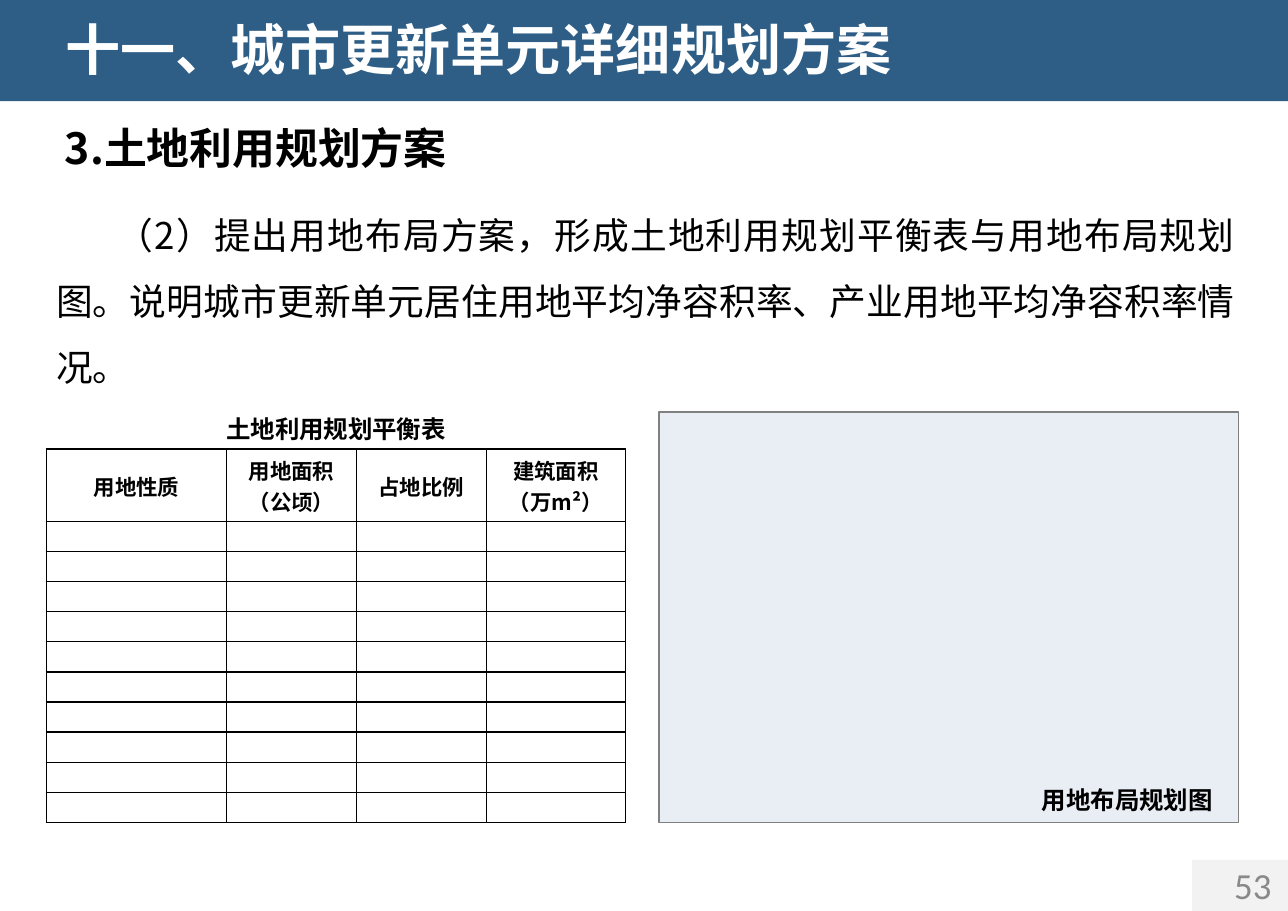
"""Builds the land-use planning slide with its balance table and layout panel."""
import pptx
import pptx.dml.color
import pptx.enum.shapes
import pptx.enum.text
import pptx.oxml.ns
import pptx.util
from lxml import etree

ALIGN = pptx.enum.text.PP_ALIGN
ANCHOR = pptx.enum.text.MSO_ANCHOR
qn = pptx.oxml.ns.qn

WIDTH, HEIGHT = pptx.util.Inches(11.69), pptx.util.Inches(8.27)
CJK, LATIN = "Noto Sans CJK SC", "Calibri"
BLACK, WHITE, GREY, PAGE_GREY = "000000", "FFFFFF", "808080", "898989"
BAND_BLUE, PANEL_BLUE = "2E5E86", "2F5597"

TITLE = "十一、城市更新单元详细规划方案"
SECTION = "3.土地利用规划方案"
BODY = ("（2）提出用地布局方案，形成土地利用规划平衡表与用地布局规划图。"
        "说明城市更新单元居住用地平均净容积率、产业用地平均净容积率情况。")
TABLE_CAPTION = "土地利用规划平衡表"
PANEL_CAPTION = "用地布局规划图"
PAGE_NUMBER = "53"
HEADINGS = ["用地性质", "用地面积\n（公顷）", "占地比例", "建筑面积\n（万m²）"]
COLUMN_WEIGHTS = [1.64, 1.18, 1.18, 1.27]
ROW_WEIGHTS = [12] + [5] * 10

# Left, top, width and height as percentages of the slide.
AREAS = {
    "corner": (92.55, 94.4, 7.45, 5.6),
    "band": (0, 0, 100, 11.1),
    "title": (4.2, 1.1, 73.4, 8.5),
    "section": (4.2, 12.7, 69.9, 6.9),
    "page": (94.55, 94.3, 5.45, 5.6),
    "panel": (51.15, 45.2, 45, 45.1),
    "panel caption": (80.05, 86, 16.3, 4.1),
    "body": (3.85, 20.55, 92.55, 22.7),
    "table caption": (3.6, 45.2, 45, 4.1),
    "table": (3.6, 49.3, 45, 41),
}


def area(name):
    """Returns the left, top, width and height of a named area."""
    return [int(share * side / 100)
            for share, side in zip(AREAS[name], (WIDTH, HEIGHT) * 2)]


def rgb(code):
    """Turns a hex string into a colour."""
    return pptx.dml.color.RGBColor.from_string(code)


def style(paragraph, size, color=BLACK, bold=False, align=ALIGN.LEFT, face=CJK):
    """Sets the alignment and font of a paragraph."""
    paragraph.alignment = align
    font = paragraph.font
    font.size, font.bold, font.name = pptx.util.Pt(size), bold, face
    font.color.rgb = rgb(color)
    defaults = paragraph._p.pPr.find(qn("a:defRPr"))
    etree.SubElement(defaults, qn("a:ea"), typeface=face)


def add_box(slide, name, color, alpha=100, outline=None):
    """Adds a plain rectangle."""
    box = slide.shapes.add_shape(
        pptx.enum.shapes.MSO_SHAPE.RECTANGLE, *area(name))
    box.shadow.inherit = False
    box.fill.solid()
    box.fill.fore_color.rgb = rgb(color)
    if alpha < 100:
        tint = box.element.spPr.find(qn("a:solidFill"))[0]
        etree.SubElement(tint, qn("a:alpha"), val=str(alpha * 1000))
    if outline:
        box.line.color.rgb = rgb(outline)
        box.line.width = pptx.util.Pt(1)
    else:
        box.line.fill.background()
    return box


def add_text(slide, name, text, size, anchor=ANCHOR.TOP, spacing=1, **look):
    """Adds a one-paragraph text box and returns its frame."""
    frame = slide.shapes.add_textbox(*area(name)).text_frame
    frame.word_wrap = True
    frame.vertical_anchor = anchor
    frame.text = text
    frame.paragraphs[0].line_spacing = spacing
    style(frame.paragraphs[0], size, **look)
    return frame


def add_title(slide):
    """Places the slide title over its band."""
    title = slide.shapes.title
    title.left, title.top, title.width, title.height = area("title")
    frame = title.text_frame
    frame.text = TITLE
    frame.word_wrap = True
    frame.auto_size = pptx.enum.text.MSO_AUTO_SIZE.NONE
    frame.vertical_anchor = ANCHOR.TOP
    style(frame.paragraphs[0], 36, WHITE, True)
    title.element.addprevious(add_box(slide, "band", BAND_BLUE).element)


def add_body(slide):
    """Adds the justified body paragraph with its first-line indent."""
    frame = add_text(slide, "body", BODY, 24, spacing=1.5, align=ALIGN.JUSTIFY)
    frame.margin_left = frame.margin_right = pptx.util.Inches(0.06)
    frame.margin_top = frame.margin_bottom = pptx.util.Inches(0.03)
    indent = pptx.util.Inches(0.55)
    frame.paragraphs[0]._p.pPr.set("indent", str(indent))


def format_cell(cell, text):
    """Fills in one table cell and draws its borders."""
    cell.margin_left = cell.margin_right = pptx.util.Inches(0.01)
    cell.margin_top, cell.margin_bottom = pptx.util.Inches(0.01), 0
    cell.vertical_anchor = ANCHOR.MIDDLE
    properties = cell._tc.get_or_add_tcPr()
    for side in ("lnL", "lnR", "lnT", "lnB"):
        border = etree.SubElement(
            properties, qn(f"a:{side}"), w=str(pptx.util.Pt(1)))
        fill = etree.SubElement(border, qn("a:solidFill"))
        etree.SubElement(fill, qn("a:srgbClr"), val=BLACK)
    cell.fill.background()
    cell.text = text
    for paragraph in cell.text_frame.paragraphs:
        if text:
            style(paragraph, 14, bold=True, align=ALIGN.CENTER)
        else:
            etree.SubElement(paragraph._p, qn("a:endParaRPr"), sz="1000")


def add_balance_table(slide):
    """Adds the balance table with a heading row and blank rows."""
    left, top, width, height = area("table")
    table = slide.shapes.add_table(
        len(ROW_WEIGHTS), len(HEADINGS), left, top, width, height).table
    for column, weight in zip(table.columns, COLUMN_WEIGHTS):
        column.width = int(width * weight / sum(COLUMN_WEIGHTS))
    for index, weight in enumerate(ROW_WEIGHTS):
        row = table.rows[index]
        row.height = int(height * weight / sum(ROW_WEIGHTS))
        for cell, heading in zip(row.cells, HEADINGS):
            format_cell(cell, "" if index else heading)


def main():
    """Builds and saves the slide."""
    deck = pptx.Presentation()
    deck.slide_width, deck.slide_height = WIDTH, HEIGHT
    slide = deck.slides.add_slide(deck.slide_layouts[5])
    add_title(slide)
    add_box(slide, "corner", GREY, alpha=10)
    add_text(slide, "section", SECTION, 28, ANCHOR.MIDDLE, bold=True)
    add_text(slide, "page", PAGE_NUMBER, 24, ANCHOR.MIDDLE,
             color=PAGE_GREY, align=ALIGN.CENTER, face=LATIN)
    add_box(slide, "panel", PANEL_BLUE, alpha=10, outline=GREY)
    add_text(slide, "panel caption", PANEL_CAPTION, 16, spacing=0.9, bold=True)
    add_body(slide)
    add_text(slide, "table caption", TABLE_CAPTION, 16, spacing=0.9,
             bold=True, align=ALIGN.CENTER)
    add_balance_table(slide)
    deck.save("out.pptx")


if __name__ == "__main__":
    main()
